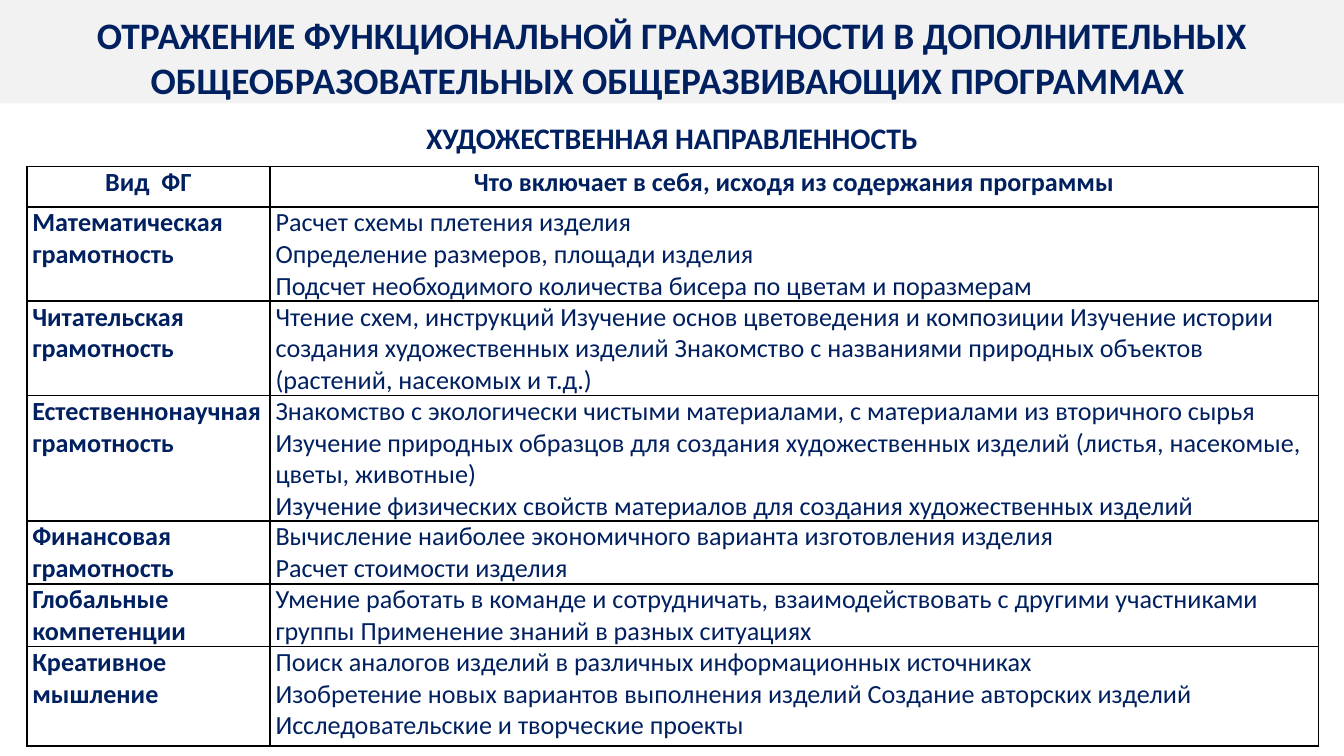
from lxml import etree
from pptx import Presentation
from pptx.dml.color import RGBColor
from pptx.enum.shapes import MSO_SHAPE
from pptx.enum.text import MSO_AUTO_SIZE, PP_ALIGN
from pptx.oxml.ns import qn
from pptx.util import Inches, Pt

NAVY = RGBColor(0x00, 0x20, 0x60)
GREY = RGBColor(0xF2, 0xF2, 0xF2)
WHITE = RGBColor(0xFF, 0xFF, 0xFF)
BLACK = RGBColor(0x00, 0x00, 0x00)
FONT = "Calibri"
CENTER = PP_ALIGN.CENTER
LEFT = PP_ALIGN.LEFT
RECTANGLE = MSO_SHAPE.RECTANGLE
FIT_SHAPE = MSO_AUTO_SIZE.SHAPE_TO_FIT_TEXT

SLIDE_WIDTH = 10
SLIDE_HEIGHT = SLIDE_WIDTH * 9 / 16
TITLE = ("ОТРАЖЕНИЕ ФУНКЦИОНАЛЬНОЙ ГРАМОТНОСТИ В ДОПОЛНИТЕЛЬНЫХ "
         "ОБЩЕОБРАЗОВАТЕЛЬНЫХ ОБЩЕРАЗВИВАЮЩИХ ПРОГРАММАХ ")
SUBTITLE = "ХУДОЖЕСТВЕННАЯ НАПРАВЛЕННОСТЬ"
COLUMN_WIDTHS = [1.81, 7.8]
LITERACY_ROWS = [
    (0.3, "Вид  ФГ", "Что включает в себя, исходя из содержания программы"),
    (0.7, "Математическая\nграмотность",
     "Расчет схемы плетения изделия\n"
     "Определение размеров, площади изделия\n"
     "Подсчет необходимого количества бисера по цветам и поразмерам"),
    (0.7, "Читательская\nграмотность",
     "Чтение схем, инструкций Изучение основ цветоведения и композиции "
     "Изучение истории создания художественных изделий Знакомство с "
     "названиями природных объектов (растений, насекомых и т.д.)"),
    (0.93, "Естественнонаучная\nграмотность",
     "Знакомство с экологически чистыми материалами, с материалами из вторичного сырья\n"
     "Изучение природных образцов для создания художественных изделий "
     "(листья, насекомые, цветы, животные)\n"
     "Изучение физических свойств материалов для создания художественных изделий"),
    (0.46, "Финансовая\nграмотность",
     "Вычисление наиболее экономичного варианта изготовления изделия\n"
     "Расчет стоимости изделия"),
    (0.46, "Глобальные\nкомпетенции",
     "Умение работать в команде и сотрудничать, взаимодействовать с другими "
     "участниками группы Применение знаний в разных ситуациях"),
    (0.74, "Креативное\nмышление",
     "Поиск аналогов изделий в различных информационных источниках\n"
     "Изобретение новых вариантов выполнения изделий Создание авторских "
     "изделий Исследовательские и творческие проекты"),
]


def write_text(frame, text, size, bold, align):
    frame.text = text
    for paragraph in frame.paragraphs:
        paragraph.alignment = align
        for run in paragraph.runs:
            run.font.name = FONT
            run.font.size = Pt(size)
            run.font.bold = bold
            run.font.color.rgb = NAVY


def add_heading(slide, left, top, width, height, text, size, wrap):
    heading = slide.shapes.add_textbox(
        Inches(left), Inches(top), Inches(width), Inches(height))
    heading.text_frame.word_wrap = wrap
    heading.text_frame.auto_size = FIT_SHAPE
    write_text(heading.text_frame, text, size, True, CENTER)


def add_title_band(slide, left, top, width, height):
    band = slide.shapes.add_shape(
        RECTANGLE, Inches(left), Inches(top), Inches(width), Inches(height))
    band.shadow.inherit = False
    band.fill.solid()
    band.fill.fore_color.rgb = GREY
    band.line.fill.background()
    add_heading(slide, left, top + 0.06, width, 0.77, TITLE, 20, True)


def set_borders(cell):
    properties = cell._tc.get_or_add_tcPr()
    for position, side in enumerate(("a:lnL", "a:lnR", "a:lnT", "a:lnB")):
        border = etree.Element(qn(side), w=str(Pt(1)))
        fill = etree.SubElement(border, qn("a:solidFill"))
        etree.SubElement(fill, qn("a:srgbClr"), val=str(BLACK))
        properties.insert(position, border)


def fill_cell(cell, text, bold, align):
    cell.margin_left = cell.margin_right = 0
    cell.margin_top = cell.margin_bottom = 0
    write_text(cell.text_frame, text, 14, bold, align)
    for paragraph in cell.text_frame.paragraphs:
        indents = paragraph._p.get_or_add_pPr()
        indents.set("marL", str(Inches(0.04)))
        indents.set("marR", str(Inches(0.04)))
        indents.set("indent", "0")
    cell.fill.solid()
    cell.fill.fore_color.rgb = WHITE
    set_borders(cell)


def add_literacy_table(slide, left, top, width, height):
    table = slide.shapes.add_table(
        len(LITERACY_ROWS), len(COLUMN_WIDTHS),
        Inches(left), Inches(top), Inches(width), Inches(height)).table
    for column, column_width in zip(table.columns, COLUMN_WIDTHS):
        column.width = Inches(column_width)
    for index, (row_height, *texts) in enumerate(LITERACY_ROWS):
        table.rows[index].height = Inches(row_height)
        is_header = index == 0
        for column_index, text in enumerate(texts):
            fill_cell(table.cell(index, column_index), text,
                      is_header or column_index == 0,
                      CENTER if is_header else LEFT)


def main():
    presentation = Presentation()
    presentation.slide_width = Inches(SLIDE_WIDTH)
    presentation.slide_height = Inches(SLIDE_HEIGHT)
    slide = presentation.slides.add_slide(presentation.slide_layouts[6])
    add_title_band(slide, 0, -0.02, SLIDE_WIDTH, 0.79)
    add_literacy_table(slide, 0.2, 1.24, 9.61, 4.3)
    add_heading(slide, 3.04, 0.84, 3.92, 0.37, SUBTITLE, 16, False)
    presentation.save("out.pptx")


if __name__ == "__main__":
    main()
